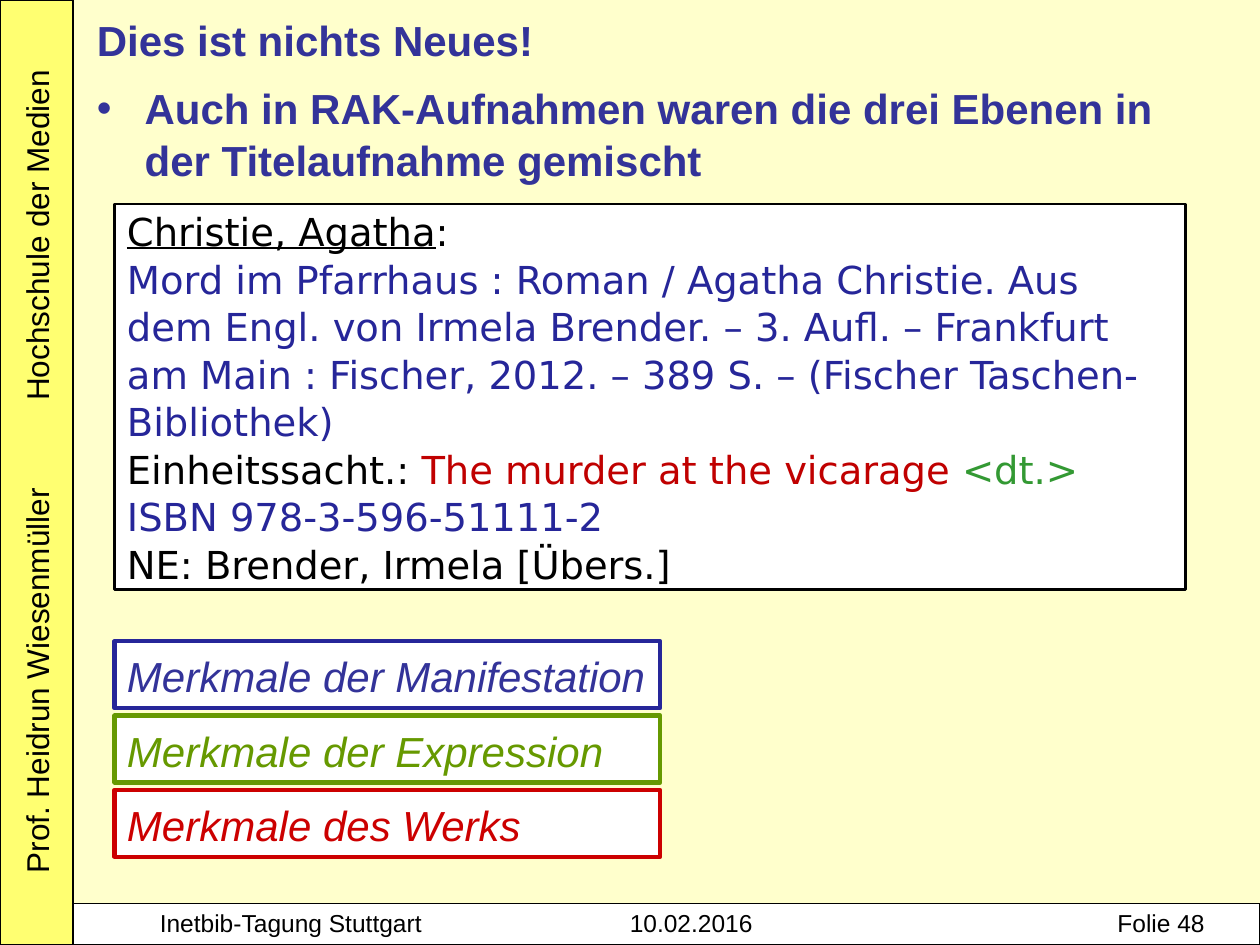
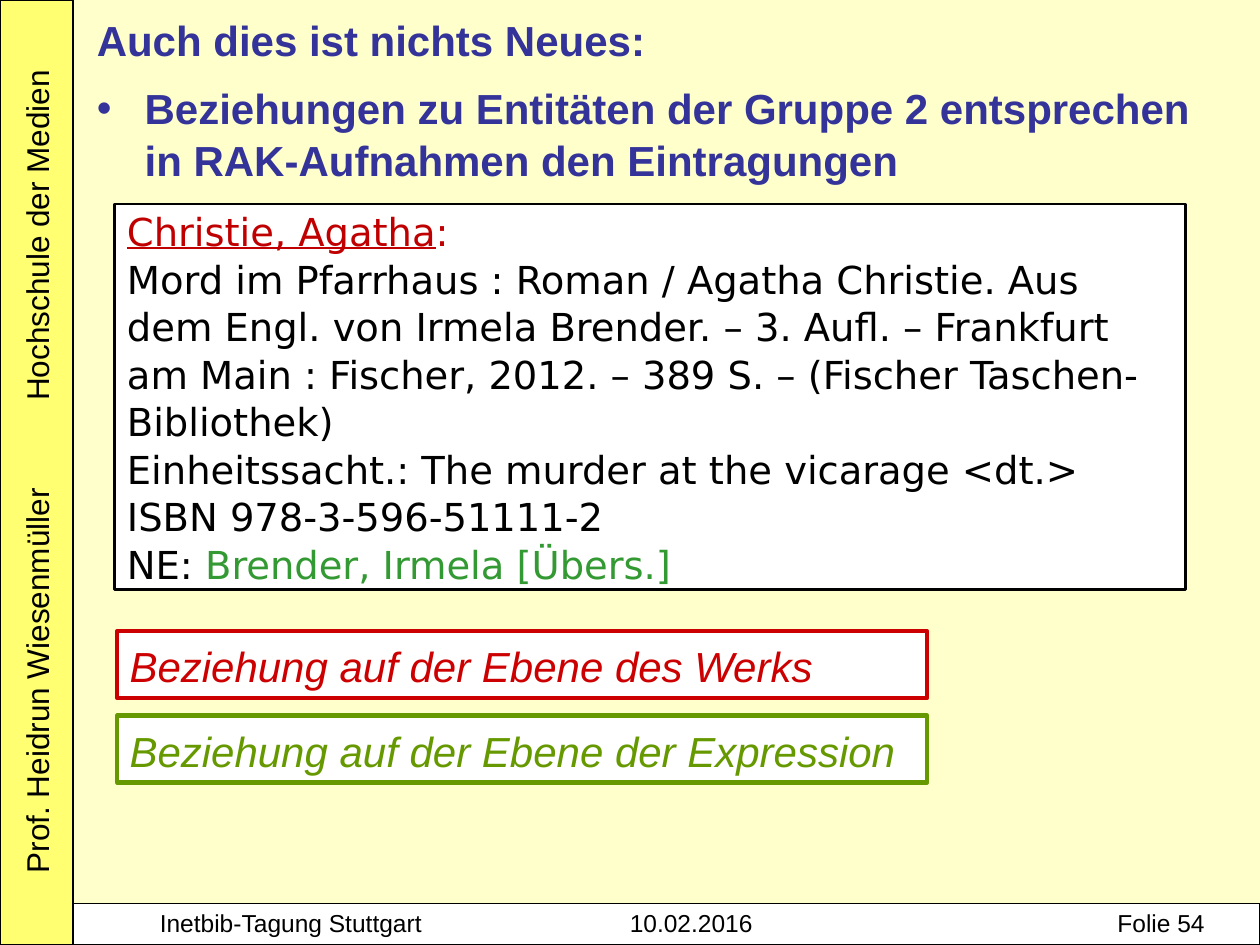
from dataclasses import dataclass
from typing import NamedTuple

from lxml.etree import SubElement
from pptx import Presentation
from pptx.dml.color import RGBColor
from pptx.enum.shapes import MSO_SHAPE as Shape
from pptx.oxml.ns import qn
from pptx.util import Inches, Pt

COLORS = {
    "page": "FFFFCC", "band": "FFFF66", "white": "FFFFFF", "black": "000000",
    "title": "333399", "blue": "262699", "red": "C00000", "green": "339933",
    "work": "CC0000", "expr": "669900",
}
SANS, CARD = "Arial", "DejaVu Sans"


class Box(NamedTuple):
    left: float
    top: float
    width: float
    height: float


class Span(NamedTuple):
    text: str
    color: str = "black"
    under: bool = False


class Label(NamedTuple):
    text: str
    color: str
    line: str


@dataclass
class Page:
    number: int
    title: str
    point: str
    card: list[list[Span]]
    labels: list[Label]
    first: Box
    step: float


def rgb(name: str) -> RGBColor:
    return RGBColor.from_string(COLORS[name])


def add_rect(slide, box: Box, fill: str, line: str, weight: float):
    rect = slide.shapes.add_shape(Shape.RECTANGLE, *map(Inches, box))
    rect.shadow.inherit = False
    rect.fill.solid()
    rect.fill.fore_color.rgb = rgb(fill)
    rect.line.color.rgb = rgb(line)
    rect.line.width = Pt(weight)
    return rect


def add_box(slide, box: Box):
    return slide.shapes.add_textbox(*map(Inches, box))


def add_tabs(para, stops: list[float]) -> None:
    tabs = SubElement(para._p.get_or_add_pPr(), qn("a:tabLst"))
    for stop in stops:
        SubElement(tabs, qn("a:tab"), pos=str(Inches(stop)), algn="l")


def add_bullet(para, indent: float) -> None:
    props = para._p.get_or_add_pPr()
    props.set("marL", str(Inches(indent)))
    props.set("indent", str(-Inches(indent)))
    SubElement(props, qn("a:buFont"), typeface=SANS)
    SubElement(props, qn("a:buChar"), char="•")


def write(shape, spans: list[Span], *, size: float, font: str = SANS,
          bold: bool = False, italic: bool = False, lead: float = 1.0,
          after: float = 0, new: bool = False):
    """Write spans as one paragraph; a newline in a span is a line break."""
    frame = shape.text_frame
    frame.word_wrap = True
    para = frame.add_paragraph() if new else frame.paragraphs[0]
    para.alignment = 1
    para.line_spacing = lead
    para.space_after = Pt(after)
    for span in spans:
        for num, part in enumerate(span.text.split("\n")):
            if num:
                para.add_line_break()
            if not part:
                continue
            run = para.add_run()
            run.text = part
            style = run.font
            style.name, style.size = font, Pt(size)
            style.bold, style.italic = bold, italic
            style.underline = span.under
            style.color.rgb = rgb(span.color)
    return para


def add_frame(slide, number: int) -> None:
    """Draw the background, side band and footer that all slides share."""
    slide.background.fill.solid()
    slide.background.fill.fore_color.rgb = rgb("page")
    band = add_rect(slide, Box(0, 0, 0.58, 7.5), "band", "black", 0.75)
    tint = band.fill._xPr.find(qn("a:solidFill"))[0]
    SubElement(tint, qn("a:alpha"), val="89000")
    add_rect(slide, Box(0.58, 7.17, 9.42, 0.33), "white", "black", 0.75)

    side = add_box(slide, Box(-3.07, 3.47, 6.72, 0.4))
    side.rotation = 270
    names = "Prof. Heidrun Wiesenmüller\tHochschule der Medien"
    add_tabs(write(side, [Span(names)], size=18), [3.75])

    foot = add_box(slide, Box(1.17, 7.16, 8.67, 0.34))
    text = f"Inetbib-Tagung Stuttgart\t10.02.2016\tFolie {number}"
    add_tabs(write(foot, [Span(text)], size=14), [3.73, 7.6])


def add_page(deck, page: Page) -> None:
    slide = deck.slides.add_slide(deck.slide_layouts[6])
    add_frame(slide, page.number)

    card = add_rect(slide, Box(0.91, 1.62, 8.5, 3.06), "white", "black", 1.5)
    for num, spans in enumerate(page.card):
        write(card, spans, size=22, font=CARD, lead=1.03, new=num > 0)

    head = add_box(slide, Box(0.67, 0.05, 9.06, 1.44))
    look = dict(size=24, bold=True, lead=1.04, after=9)
    write(head, [Span(page.title, "title")], **look)
    add_bullet(write(head, [Span(page.point, "title")], new=True, **look), 0.38)

    for num, label in enumerate(page.labels):
        box = page.first._replace(top=page.first.top + num * page.step)
        rect = add_rect(slide, box, "white", label.line, 2.5)
        write(rect, [Span(label.text, label.color)], size=24, italic=True,
              lead=1.05)


ENTRY = ("Mord im Pfarrhaus : Roman / Agatha Christie. Aus dem Engl. von "
         "Irmela Brender. – 3. Aufl. – Frankfurt am Main : Fischer, 2012. – "
         "389 S. – (Fischer Taschen-Bibliothek)")
AUTHOR = "Christie, Agatha"
UNIFORM = "Einheitssacht.: "
WORK = "The murder at the vicarage "
LANG = "<dt.>"
ISBN = "ISBN 978-3-596-51111-2\n"
HELPER = "Brender, Irmela [Übers.]"

PAGES = [
    Page(
        48, "Dies ist nichts Neues!",
        "Auch in RAK-Aufnahmen waren die drei Ebenen in der Titelaufnahme "
        "gemischt",
        [[Span(AUTHOR, under=True), Span(":\n"), Span(ENTRY, "blue")],
         [Span(UNIFORM), Span(WORK, "red"), Span(LANG, "green")],
         [Span(ISBN, "blue"), Span("NE: " + HELPER)]],
        [Label("Merkmale der Manifestation", "title", "blue"),
         Label("Merkmale der Expression", "expr", "expr"),
         Label("Merkmale des Werks", "work", "work")],
        Box(0.91, 5.09, 4.33, 0.53), 0.59),
    Page(
        54, "Auch dies ist nichts Neues:",
        "Beziehungen zu Entitäten der Gruppe 2 entsprechen in RAK-Aufnahmen "
        "den Eintragungen",
        [[Span(AUTHOR, "red", True), Span(":\n", "red"), Span(ENTRY)],
         [Span(UNIFORM + WORK + LANG)],
         [Span(ISBN + "NE: "), Span(HELPER, "green")]],
        [Label("Beziehung auf der Ebene des Werks", "work", "work"),
         Label("Beziehung auf der Ebene der Expression", "expr", "expr")],
        Box(0.93, 5.01, 6.43, 0.53), 0.67),
]


def main() -> None:
    deck = Presentation()
    deck.slide_width, deck.slide_height = Inches(10), Inches(7.5)
    for page in PAGES:
        add_page(deck, page)
    deck.save("out.pptx")


if __name__ == "__main__":
    main()
